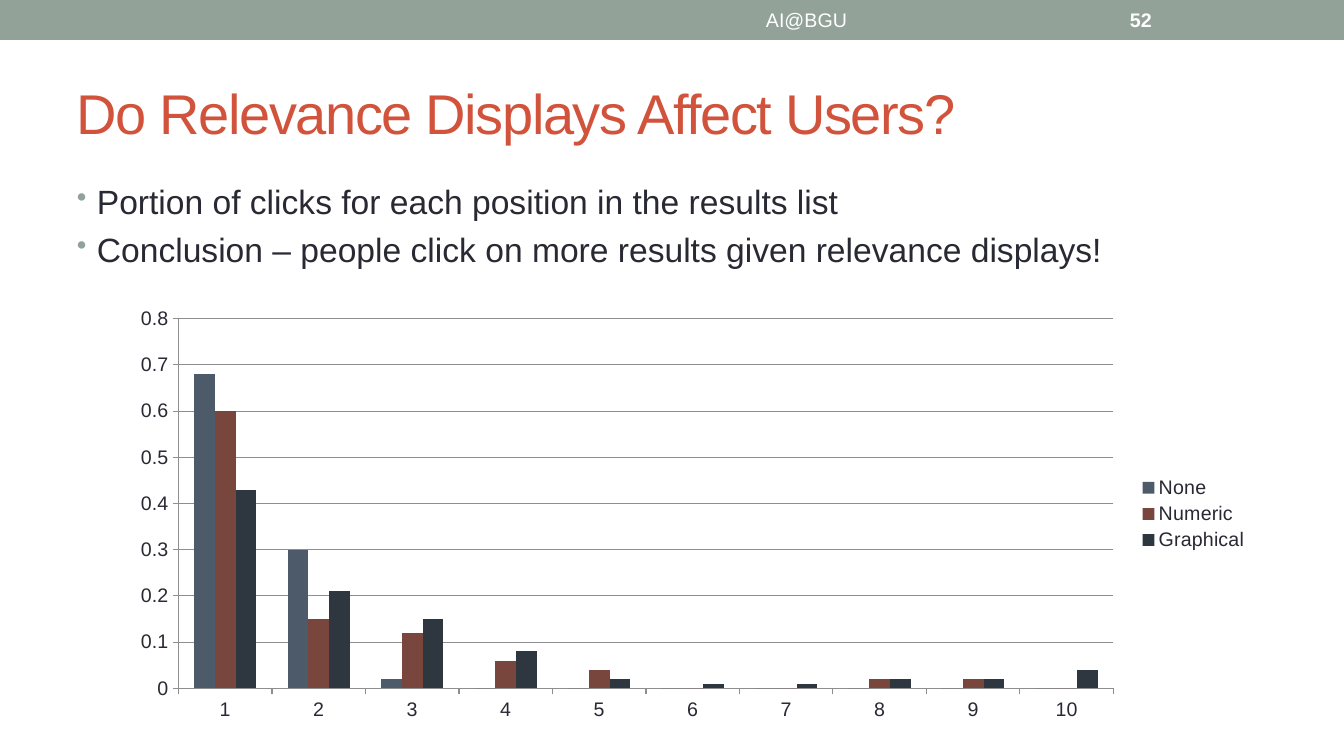
from lxml.etree import SubElement
from pptx import Presentation
from pptx.chart.data import CategoryChartData
from pptx.dml.color import RGBColor
from pptx.enum.chart import XL_CHART_TYPE as ChartType, XL_LEGEND_POSITION as LegendPosition
from pptx.enum.chart import XL_TICK_MARK as TickMark
from pptx.enum.shapes import MSO_SHAPE as Shape
from pptx.enum.text import MSO_ANCHOR as Anchor, PP_ALIGN as Align
from pptx.oxml.ns import qn
from pptx.util import Emu, Pt

EMU_PER_PX = 914400 / 100.8
FONT = "Arial"
SAGE, RED, INK, GRAY, WHITE = "93A299", "D2533C", "292934", "8E8E90", "FFFFFF"

POSITIONS = [str(position) for position in range(1, 11)]
CLICKS = [
    ("None", "4C5A6A", [0.68, 0.3, 0.02, 0, 0, 0, 0, 0, 0, 0]),
    ("Numeric", "79463D", [0.6, 0.15, 0.12, 0.06, 0.04, 0, 0, 0.02, 0.02, 0]),
    ("Graphical", "2E3640", [0.43, 0.21, 0.15, 0.08, 0.02, 0.01, 0.01, 0.02, 0.02, 0.04]),
]


def px(*lengths):
    return [Emu(round(length * EMU_PER_PX)) for length in lengths]


def color(hex_string):
    return RGBColor.from_string(hex_string)


def style_font(font, size, hex_string, bold=False):
    font.name = FONT
    font.size = Pt(size)
    font.bold = bold
    font.color.rgb = color(hex_string)


def style_line(line):
    line.color.rgb = color(GRAY)
    line.width = Pt(0.75)


def add_bullet(paragraph):
    properties = paragraph._p.get_or_add_pPr()
    indent = px(20)[0]
    properties.set("marL", str(indent))
    properties.set("indent", str(-indent))
    bullet_color = SubElement(properties, qn("a:buClr"))
    SubElement(bullet_color, qn("a:srgbClr"), val=SAGE)
    SubElement(properties, qn("a:buSzPct"), val="85000")
    SubElement(properties, qn("a:buChar"), char="•")


def add_text(slide, box, lines, size, hex_string, bold=False, align=Align.LEFT,
             anchor=Anchor.MIDDLE, bullets=False, gap=0, spacing=0):
    frame = slide.shapes.add_textbox(*px(*box)).text_frame
    frame.word_wrap = True
    frame.vertical_anchor = anchor
    for index, line in enumerate(lines):
        paragraph = frame.add_paragraph() if index else frame.paragraphs[0]
        paragraph.alignment = align
        if index:
            paragraph.space_before = Pt(gap)
        if bullets:
            add_bullet(paragraph)
        run = paragraph.add_run()
        run.text = line
        style_font(run.font, size, hex_string, bold)
        if spacing:
            run._r.get_or_add_rPr().set("spc", str(spacing * 100))


def add_band(slide, box, hex_string):
    band = slide.shapes.add_shape(Shape.RECTANGLE, *px(*box))
    band.shadow.inherit = False
    band.fill.solid()
    band.fill.fore_color.rgb = color(hex_string)
    band.line.fill.background()


def add_column_chart(slide, box, categories, series_rows):
    data = CategoryChartData()
    data.categories = categories
    for name, _, values in series_rows:
        data.add_series(name, values)
    chart = slide.shapes.add_chart(ChartType.COLUMN_CLUSTERED, *px(*box), data).chart
    chart.has_title = False
    style_font(chart.font, 14, INK)

    # Columns
    plot = chart.plots[0]
    plot.gap_width = 150
    plot.overlap = 0
    plot.vary_by_categories = False
    for series, (_, hex_string, _) in zip(plot.series, series_rows):
        series.format.fill.solid()
        series.format.fill.fore_color.rgb = color(hex_string)

    # Axes
    for axis in (chart.category_axis, chart.value_axis):
        axis.major_tick_mark = TickMark.OUTSIDE
        axis.minor_tick_mark = TickMark.NONE
        style_line(axis.format.line)
        style_font(axis.tick_labels.font, 14, INK)
    value_axis = chart.value_axis
    value_axis.minimum_scale, value_axis.maximum_scale = 0, 0.8
    value_axis.major_unit = 0.1
    value_axis.has_major_gridlines = True
    style_line(value_axis.major_gridlines.format.line)

    # Legend
    chart.has_legend = True
    chart.legend.position = LegendPosition.RIGHT
    chart.legend.include_in_layout = False
    style_font(chart.legend.font, 14, INK)


def main():
    presentation = Presentation()
    presentation.slide_width, presentation.slide_height = px(1344, 756)
    slide = presentation.slides.add_slide(presentation.slide_layouts[6])

    # Header band
    add_band(slide, (0, 0, 1344, 40), SAGE)
    add_text(slide, (504, 2, 605, 36), ["AI@BGU"], 14, WHITE, align=Align.CENTER)
    add_text(slide, (1120, 2, 157, 36), ["52"], 14, WHITE, bold=True)

    # Title and findings
    add_text(slide, (67, 58, 1210, 109), ["Do Relevance Displays Affect Users?"],
             40, RED, spacing=-1)
    add_text(slide, (67, 176, 1210, 537), [
        "Portion of clicks for each position in the results list",
        "Conclusion – people click on more results given relevance displays!",
    ], 24, INK, anchor=Anchor.TOP, bullets=True, gap=5.5)

    # Clicks by result position
    add_column_chart(slide, (118, 299, 1141, 430), POSITIONS, CLICKS)

    presentation.save("out.pptx")


if __name__ == "__main__":
    main()
